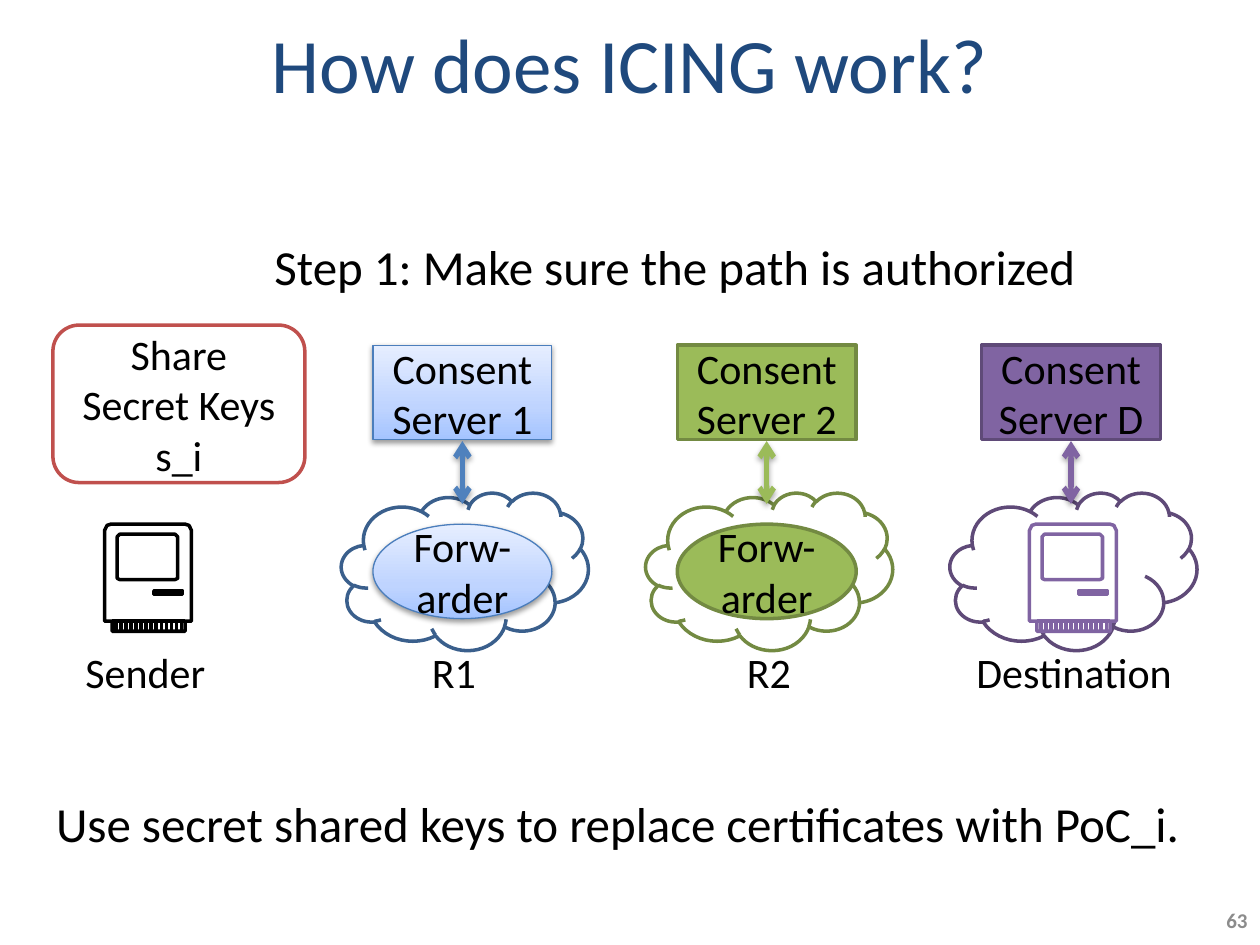
from pptx import Presentation
from pptx.dml.color import RGBColor
from pptx.enum.shapes import MSO_CONNECTOR, MSO_SHAPE
from pptx.enum.text import MSO_ANCHOR, PP_ALIGN
from pptx.oxml import parse_xml
from pptx.oxml.ns import nsdecls
from pptx.util import Inches, Pt

TITLE = "How does ICING work?"
BLUE = [(0, "A4C4FF"), (35, "BFD4FF"), (100, "E6EEFF")]
NODES = [  # server, server fill, box line, line width, cloud line, arrow, inner text
    ("Consent Server 1", BLUE, "4B7EBC", 0.75, "3A5F8C", "4F81BD", "Forw-arder"),
    ("Consent Server 2", "9BBB59", "738A42", 2, "738A42", "9BBB59", "Forw-arder"),
    ("Consent Server D", "8064A2", "5F4A78", 2, "5F4A78", "8064A2", None),
]
LEFT, CENTER, RIGHT = PP_ALIGN.LEFT, PP_ALIGN.CENTER, PP_ALIGN.RIGHT
LABELS = [
    ("Sender", (0.58, 5.08, 1.16, 0.5), 24, LEFT),
    ("R1", (3.33, 5.08, 0.55, 0.51), 24, LEFT),
    ("R2", (5.83, 5.08, 0.55, 0.51), 24, LEFT),
    ("Destination", (7.64, 5.08, 1.77, 0.5), 24, CENTER),
    ("Step 1: Make sure the path is authorized", (2.08, 1.83, 6.63, 0.57), 28, LEFT),
    ("Use secret shared keys to replace certificates with PoC_i.",
     (0.29, 6.25, 9.22, 0.57), 28, CENTER),
]
KEYS = ("Share Secret Keys s_i", (0.42, 2.58, 2, 1.25), "C0504D")
COMPUTERS = [(0.83, None, "000000"), (8.17, "FFFFFF", "8064A2")]
BODY = [(6, 85), (6, 77), (0, 77), (0, 5), (2, 1), (5, 0), (64, 0), (67, 1),
        (69, 5), (69, 77), (64, 77), (64, 85)]
SCREEN = [(10, 10), (12, 8), (56, 8), (58, 10), (58, 43), (56, 44), (12, 44), (10, 43)]
SLOT = [(39, 53), (62, 53), (62, 56), (39, 56)]
BASE = [(6, 77), (64, 77)]
TEETH = [[(x, 77), (x, 85)] for x in range(9, 62, 4)]
FIRST, LAST = 3.67, 8.5
BOX_W, BOX_H = 1.42, 0.75


def rgb(value):
    """Turn a hex string into a colour."""
    return RGBColor.from_string(value)


def inches(*values):
    """Turn numbers into lengths."""
    return [Inches(v) for v in values]


def write(tf, text, size, color="000000", align=CENTER, anchor=MSO_ANCHOR.MIDDLE,
          wrap=True, bold=False):
    """Put one formatted run in a text frame."""
    tf.word_wrap, tf.vertical_anchor = wrap, anchor
    p = tf.paragraphs[0]
    p.alignment = align
    r = p.add_run()
    r.text = text
    for key, value in {"size": Pt(size), "name": "Calibri", "bold": bold}.items():
        setattr(r.font, key, value)
    r.font.color.rgb = rgb(color)


def add_shadow(effects, dist, alpha):
    """Add a soft shadow that falls straight down."""
    effects.append(parse_xml(
        f'<a:outerShdw {nsdecls("a")} blurRad="40000" dist="{dist}" dir="5400000" '
        f'rotWithShape="0"><a:srgbClr val="000000"><a:alpha val="{alpha}000"/>'
        '</a:srgbClr></a:outerShdw>'))


def paint(sp, fill, line, width):
    """Set fill, outline and shadow of a shape."""
    sp.shadow.inherit = False
    if isinstance(fill, list):
        stops = "".join(f'<a:gs pos="{pos}000"><a:srgbClr val="{c}"/></a:gs>'
                        for pos, c in fill)
        sp._element.spPr.insert(2, parse_xml(
            f'<a:gradFill {nsdecls("a")} rotWithShape="1"><a:gsLst>{stops}</a:gsLst>'
            '<a:lin ang="16200000" scaled="0"/></a:gradFill>'))
        add_shadow(sp._element.spPr.find(".//{*}effectLst"), 20000, 38)
    elif fill:
        sp.fill.solid()
        sp.fill.fore_color.rgb = rgb(fill)
    else:
        sp.fill.background()
    sp.line.color.rgb, sp.line.width = rgb(line), Pt(width)


def add_box(s, kind, box, fill, line, width=2, text=None):
    """Add a preset shape with optional centred text."""
    sp = s.shapes.add_shape(kind, *inches(*box))
    paint(sp, fill, line, width)
    if text:
        write(sp.text_frame, text, 24)


def add_label(s, text, box, size, **style):
    """Add a text box."""
    write(s.shapes.add_textbox(*inches(*box)).text_frame, text, size, **style)


def add_arrow(s, x, top, bottom, color):
    """Add a vertical double-headed arrow."""
    cn = s.shapes.add_connector(MSO_CONNECTOR.STRAIGHT, *inches(x, bottom, x, top))
    cn.line.color.rgb, cn.line.width = rgb(color), Pt(3)
    for end in ("headEnd", "tailEnd"):
        cn.line._ln.append(parse_xml(f'<a:{end} {nsdecls("a")} type="arrow"/>'))
    effects = parse_xml(f'<a:effectLst {nsdecls("a")}/>')
    cn._element.spPr.append(effects)
    add_shadow(effects, 23000, 35)


def add_computer(s, left, top, fill, line):
    """Draw a desktop computer as one outline in hundredths of an inch."""
    fb = s.shapes.build_freeform(*BODY[0], scale=Inches(0.01))
    fb.add_line_segments(BODY[1:], close=True)
    for part in [SCREEN, SLOT, BASE, *TEETH]:
        fb.move_to(*part[0])
        fb.add_line_segments(part[1:], close=len(part) > 2)
    paint(fb.convert_to_shape(*inches(left, top)), fill, line, 2)


def main():
    """Build the slide."""
    prs = Presentation()
    prs.slide_width, prs.slide_height = inches(10, 7.5)
    s = prs.slides.add_slide(prs.slide_layouts[5])
    title = s.shapes.title
    title.left, title.top, title.width, title.height = inches(0.5, 0, 9, 1)
    write(title.text_frame, TITLE, 44, "1F497D")

    pitch = (LAST - FIRST) / (len(NODES) - 1)
    for i, (server, fill, line, width, cloud, arrow, inner) in enumerate(NODES):
        mid = FIRST + i * pitch
        left = mid - BOX_W / 2
        add_box(s, MSO_SHAPE.CLOUD, (mid - 0.96, 3.91, 1.96, 1.25), "FFFFFF", cloud)
        add_box(s, MSO_SHAPE.RECTANGLE, (left, 2.74, BOX_W, BOX_H), fill, line, width, server)
        if inner:
            add_box(s, MSO_SHAPE.OVAL, (left, 4.16, BOX_W, BOX_H), fill, line, width, inner)
        add_arrow(s, mid, 3.5, 4, arrow)

    for left, fill, line in COMPUTERS:
        add_computer(s, left, 4.16, fill, line)
    for text, box, size, align in LABELS:
        add_label(s, text, box, size, align=align, anchor=MSO_ANCHOR.TOP, wrap=False)
    text, box, line = KEYS
    add_box(s, MSO_SHAPE.ROUNDED_RECTANGLE, box, "FFFFFF", line, text=text)
    add_label(s, "63", (9.31, 7.1, 0.69, 0.4), 12, color="8C8C8C", align=RIGHT, bold=True)
    prs.save("out.pptx")


if __name__ == "__main__":
    main()
